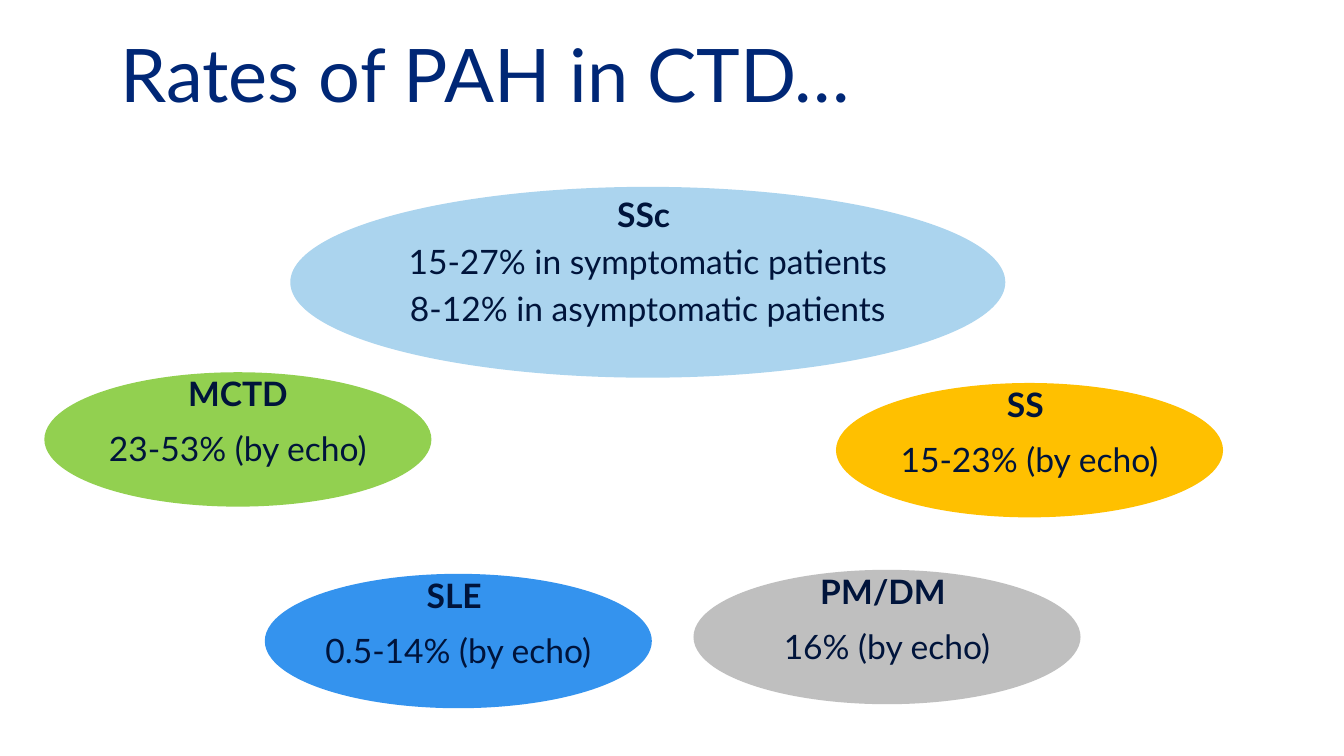
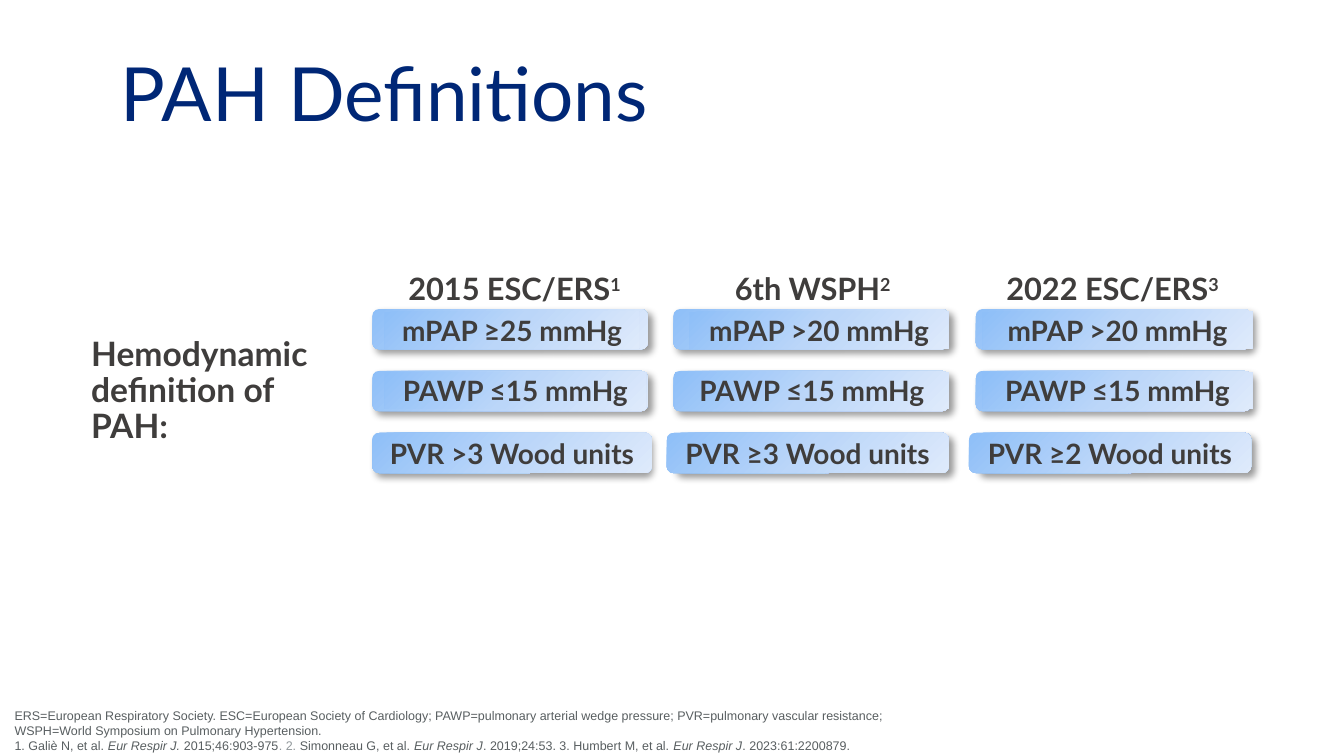
"""Build two slides on pulmonary arterial hypertension rates and definitions."""
from pptx import Presentation
from pptx.dml.color import RGBColor
from pptx.enum.shapes import MSO_SHAPE
from pptx.enum.text import MSO_ANCHOR, PP_ALIGN
from pptx.oxml import parse_xml
from pptx.oxml.ns import nsdecls, qn
from pptx.util import Emu, Pt

OVAL, RECTANGLE, ROUNDED = MSO_SHAPE.OVAL, MSO_SHAPE.RECTANGLE, MSO_SHAPE.ROUNDED_RECTANGLE
TOP, MIDDLE, BOTTOM = MSO_ANCHOR.TOP, MSO_ANCHOR.MIDDLE, MSO_ANCHOR.BOTTOM
LEFT, CENTER = PP_ALIGN.LEFT, PP_ALIGN.CENTER

EMU_PER_PX = 9144
SLIDE_WIDTH = 1000
BLANK_LAYOUT = 6
FONT, FOOTER_FONT = "Lato", "Arial"
COLORS = {
    "title": "002776", "rate": "00143B", "body": "3F3D3C",
    "footer": "585E60", "faint": "90979A", "shadow": "000000",
    "sky": "ABD4EE", "amber": "FFC000", "green": "92D050",
    "blue": "3493EE", "gray": "BFBFBF",
}
BAR_GRADIENT = ((0, "8EBFF8"), (50, "BBD6F9"), (100, "DEEAFB"))

OVAL_SIZE = (288, 100)
SMALL_OVALS = (
    (622, 285, "amber", "SS ", "15-23% (by echo)"),
    (33, 277, "green", "MCTD", "23-53% (by echo)"),
    (197, 427, "blue", "SLE ", "0.5-14% (by echo)"),
    (516, 424, "gray", "PM/DM ", "16% (by echo)"),
)

BAR_TOP, BAR_PITCH, BAR_WIDTH, BAR_HEIGHT = 230, 46, 205, 30
LABEL_ROWS = ((2, 27, RECTANGLE), (1, 27, RECTANGLE), (0, 30, ROUNDED))
DEFINITIONS = (
    (277, (294, 225), "2015 ESC/ERS", "1",
     ((286, 190, "mPAP ≥25 mmHg"), (286, 195, "PAWP ≤15 mmHg"), (277, 208, "PVR >3 Wood units"))),
    (501, (537, 190), "6th WSPH", "2",
     ((513, 193, "mPAP >20 mmHg"), (502, 204, "PAWP ≤15 mmHg"), (496, 210, "PVR ≥3 Wood units"))),
    (726, (739, 190), "2022 ESC/ERS", "3",
     ((731, 201, "mPAP >20 mmHg"), (731, 201, "PAWP ≤15 mmHg"), (721, 210, "PVR ≥2 Wood units"))),
)

ABBREVIATIONS = (
    "ERS=European Respiratory Society. ESC=European Society of Cardiology; "
    "PAWP=pulmonary arterial wedge pressure; PVR=pulmonary vascular resistance; "
    "WSPH=World Symposium on Pulmonary Hypertension."
)
CITATIONS = (
    ("1. Galiè N, et al. ", None), ("Eur Respir J.", "italic"), (" 2015;46:903-975", None),
    (". 2. ", "faint"), ("Simonneau G, et al. ", None), ("Eur Respir J", "italic"),
    (". 2019;24:53. 3. Humbert M, et al. ", None), ("Eur Respir J", "italic"),
    (". 2023:61:2200879.", None),
)


def px(*lengths):
    """Turn px lengths into EMU."""
    return [Emu(length * EMU_PER_PX) for length in lengths]


def rgb(name):
    """Look up a named colour."""
    return RGBColor.from_string(COLORS[name])


def style(paragraph, size, color, bold=False, align=LEFT, font=FONT, before=0, spacing=None):
    """Set the font and layout of a paragraph."""
    paragraph.alignment = align
    if before:
        paragraph.space_before = Pt(before)
    if spacing:
        paragraph.line_spacing = spacing
    paragraph.font.name = font
    paragraph.font.size = Pt(size)
    paragraph.font.bold = bold
    paragraph.font.color.rgb = rgb(color)


def add_box(slide, box, anchor=TOP, insets=None):
    """Add a wrapping text box and return its text frame."""
    frame = slide.shapes.add_textbox(*px(*box)).text_frame
    frame.word_wrap = True
    frame.vertical_anchor = anchor
    if insets:
        side, edge = px(*insets)
        frame.margin_left = frame.margin_right = side
        frame.margin_top = frame.margin_bottom = edge
    return frame


def add_shape(slide, kind, box):
    """Add a preset shape with no line or shadow."""
    shape = slide.shapes.add_shape(kind, *px(*box))
    shape.shadow.inherit = False
    shape.line.fill.background()
    return shape


def add_title(slide, text, box, size):
    """Add the slide title."""
    paragraph = add_box(slide, box, MIDDLE).paragraphs[0]
    paragraph.text = text
    style(paragraph, size, "title")


def add_rate(slide, box, text_box, fill, lines, before, spacing=None, insets=None):
    """Add a coloured oval with a bold name above its rates."""
    shape = add_shape(slide, OVAL, box)
    shape.fill.solid()
    shape.fill.fore_color.rgb = rgb(fill)
    frame = add_box(slide, text_box, insets=insets)
    frame.text = "\n".join(lines)
    for index, paragraph in enumerate(frame.paragraphs):
        first = index == 0
        style(paragraph, 18, "rate", first, CENTER, before=0 if first else before, spacing=spacing)


def add_gradient_shape(slide, kind, box):
    """Add a shape with the diagonal bar gradient."""
    shape = add_shape(slide, kind, box)
    shape.fill.gradient()
    shape.fill.gradient_angle = 315
    stops = shape.element.spPr.find(f".//{qn('a:gsLst')}")
    for stop in list(stops):
        stops.remove(stop)
    for position, color in BAR_GRADIENT:
        stops.append(parse_xml(
            f'<a:gs {nsdecls("a")} pos="{position * 1000}"><a:srgbClr val="{color}"/></a:gs>'))
    return shape


def add_bar(slide, left, top):
    """Add a rounded bar with a soft shadow."""
    shape = add_gradient_shape(slide, ROUNDED, (left, top, BAR_WIDTH, BAR_HEIGHT))
    shape.element.spPr.find(qn("a:effectLst")).append(parse_xml(
        f'<a:outerShdw {nsdecls("a")} blurRad="{Pt(4)}" dist="{Pt(3)}" dir="2700000" '
        f'algn="tl" rotWithShape="0"><a:srgbClr val="{COLORS["shadow"]}">'
        '<a:alpha val="40000"/></a:srgbClr></a:outerShdw>'))


def add_bar_label(slide, kind, box, text):
    """Add the bold criterion on a bar."""
    frame = add_gradient_shape(slide, kind, box).text_frame
    frame.word_wrap = True
    frame.vertical_anchor = MIDDLE
    paragraph = frame.paragraphs[0]
    paragraph.text = text
    style(paragraph, 15, "body", True, CENTER)


def add_heading(slide, box, text, size, reference=""):
    """Add a bold heading with an optional raised reference number."""
    paragraph = add_box(slide, box).paragraphs[0]
    paragraph.text = text
    if reference:
        run = paragraph.add_run()
        run.text = reference
        run.font._element.set("baseline", "30000")
    style(paragraph, size, "body", True, spacing=0.9)


def add_definition(slide, bar_left, heading_span, heading, reference, criteria):
    """Add one guideline column: a heading over its criteria bars."""
    left, width = heading_span
    add_heading(slide, (left, 199, width, 36), heading, 16.5, reference)
    for row, (criterion, label_row) in enumerate(zip(criteria, LABEL_ROWS)):
        top = BAR_TOP + row * BAR_PITCH
        label_left, label_width, text = criterion
        offset, height, kind = label_row
        add_bar(slide, bar_left, top)
        add_bar_label(slide, kind, (label_left, top + offset, label_width, height), text)


def add_footer(slide):
    """Add the abbreviations and citations."""
    paragraph = add_box(slide, (1, 521, 705, 44), BOTTOM).paragraphs[0]
    paragraph.add_run().text = ABBREVIATIONS
    paragraph.add_line_break()
    for text, look in CITATIONS:
        run = paragraph.add_run()
        run.text = text
        if look == "italic":
            run.font.italic = True
        elif look:
            run.font.color.rgb = rgb(look)
    style(paragraph, 6.7, "footer", font=FOOTER_FONT)


def build_rates(slide):
    """Build the slide of rates by disease."""
    add_title(slide, "Rates of PAH in CTD…", (80, 20, 832, 68), 39.6)
    add_rate(slide, (216, 139, 532, 142), (216, 139, 532, 165), "sky",
             ("SSc ", "15-27% in symptomatic patients", "8-12% in asymptomatic patients"), 3.6)
    for left, top, fill, name, rate in SMALL_OVALS:
        box = (left, top, *OVAL_SIZE)
        add_rate(slide, box, box, fill, (name, rate), 10, 0.9, (7, 4))


def build_definitions(slide):
    """Build the slide of hemodynamic definitions."""
    add_title(slide, "PAH Definitions", (80, 21, 830, 94), 40)
    add_heading(slide, (58, 246, 215, 93), "Hemodynamic definition of PAH:", 18)
    for definition in DEFINITIONS:
        add_definition(slide, *definition)
    add_footer(slide)


def main():
    """Build and save the presentation."""
    presentation = Presentation()
    presentation.slide_width, = px(SLIDE_WIDTH)
    presentation.slide_height = Emu(presentation.slide_width * 9 // 16)
    for build in (build_rates, build_definitions):
        build(presentation.slides.add_slide(presentation.slide_layouts[BLANK_LAYOUT]))
    presentation.save("out.pptx")


if __name__ == "__main__":
    main()
